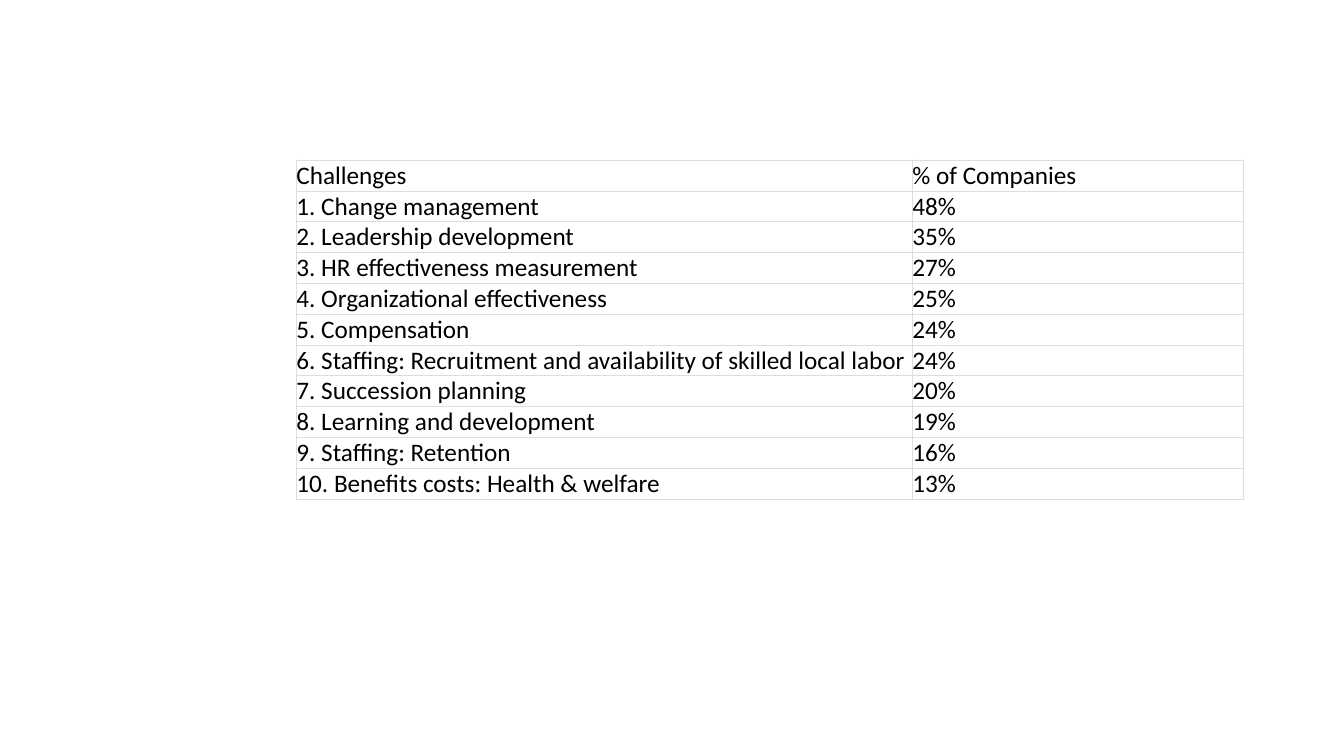
import pptx
import pptx.dml.color
import pptx.enum.text
import pptx.oxml
import pptx.oxml.ns
import pptx.util
from pptx.util import Inches

HEADINGS = ("Challenges", "% of Companies")
CHALLENGES = [
    ("Change management", 48),
    ("Leadership development", 35),
    ("HR effectiveness measurement", 27),
    ("Organizational effectiveness", 25),
    ("Compensation", 24),
    ("Staffing: Recruitment and availability of skilled local labor", 24),
    ("Succession planning", 20),
    ("Learning and development", 19),
    ("Staffing: Retention", 16),
    ("Benefits costs: Health & welfare", 13),
]
LEFT, TOP = 2.94, 1.59
COLUMN_WIDTHS = (6.11, 3.28)
ROW_HEIGHT = 0.3
TEXT, CELL_FILL, BORDER = "000000", "FFFFFF", "DDDDDD"


def color(hex_code):
    return pptx.dml.color.RGBColor.from_string(hex_code)


def add_borders(cell):
    properties = cell._tc.get_or_add_tcPr()
    for side in ("lnL", "lnR", "lnT", "lnB"):
        properties.append(pptx.oxml.parse_xml(
            f'<a:{side} {pptx.oxml.ns.nsdecls("a")} w="{pptx.util.Pt(0.75)}">'
            f'<a:solidFill><a:srgbClr val="{BORDER}"/></a:solidFill></a:{side}>'))


def fill_cell(cell, text):
    """Set the text, borders and background of one cell."""
    add_borders(cell)
    cell.fill.solid()
    cell.fill.fore_color.rgb = color(CELL_FILL)
    cell.margin_left = cell.margin_right = cell.margin_top = cell.margin_bottom = 0
    cell.vertical_anchor = pptx.enum.text.MSO_ANCHOR.MIDDLE
    cell.text = text
    font = cell.text_frame.paragraphs[0].font
    font.name = "Calibri"
    font.size = pptx.util.Pt(18)
    font.bold = False
    font.color.rgb = color(TEXT)


def main():
    presentation = pptx.Presentation()
    presentation.slide_width = Inches(13.33)
    presentation.slide_height = Inches(7.5)
    slide = presentation.slides.add_slide(presentation.slide_layouts[6])

    lines = [HEADINGS] + [
        (f"{rank}. {challenge}", f"{share}%")
        for rank, (challenge, share) in enumerate(CHALLENGES, 1)]
    ranking = slide.shapes.add_table(
        len(lines), len(HEADINGS), Inches(LEFT), Inches(TOP),
        Inches(sum(COLUMN_WIDTHS)), Inches(ROW_HEIGHT * len(lines))).table
    ranking.first_row = ranking.horz_banding = False
    for column, width in zip(ranking.columns, COLUMN_WIDTHS):
        column.width = Inches(width)
    for row, line in zip(ranking.rows, lines):
        row.height = Inches(ROW_HEIGHT)
        for cell, text in zip(row.cells, line):
            fill_cell(cell, text)

    presentation.save("out.pptx")


if __name__ == "__main__":
    main()
